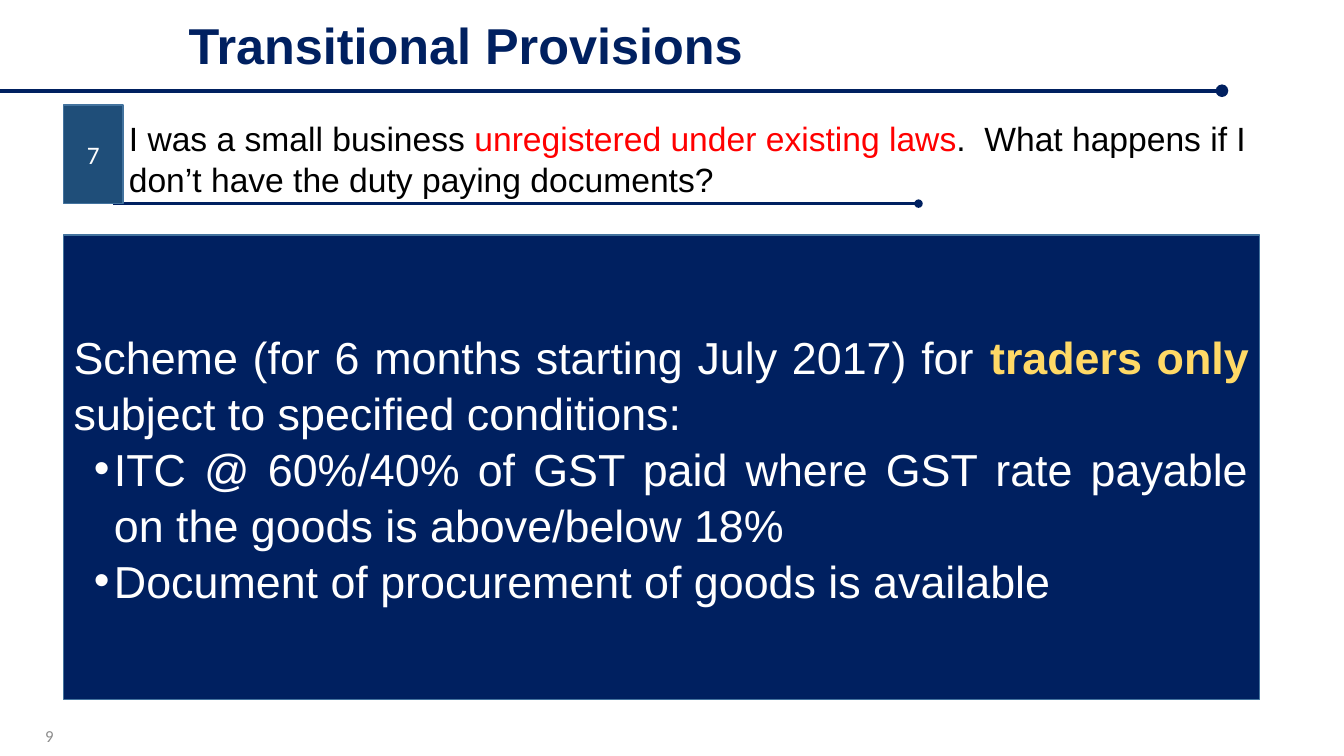
from lxml import etree
from pptx import Presentation
from pptx.dml.color import RGBColor
from pptx.enum.shapes import MSO_CONNECTOR, MSO_SHAPE
from pptx.enum.text import MSO_ANCHOR, MSO_AUTO_SIZE, PP_ALIGN
from pptx.oxml.ns import qn
from pptx.util import Pt

EMU_PER_PX = 9144  # 100 px to the inch
COLORS = {
    "navy": "002060", "badge": "1F4E79", "border": "43739E", "white": "FFFFFF",
    "black": "000000", "red": "FF0000", "gold": "FFD966", "grey": "8C8C8C",
}


def px(length):
    return length * EMU_PER_PX


def rgb(name):
    return RGBColor.from_string(COLORS[name])


def place(shape, box):
    shape.left, shape.top, shape.width, shape.height = map(px, box)


def write(paragraph, parts, size, font="Arial", align=PP_ALIGN.LEFT, spacing=1.0):
    """Fill a paragraph with (text, colour, bold) parts."""
    paragraph.alignment = align
    paragraph.line_spacing = spacing
    paragraph.space_before = Pt(0)
    for text, color, bold in parts:
        run = paragraph.add_run()
        run.text = text
        run.font.size = Pt(size)
        run.font.name = font
        run.font.bold = bold
        run.font.color.rgb = rgb(color)


def set_frame(shape, anchor):
    frame = shape.text_frame
    frame.word_wrap = True
    frame.auto_size = MSO_AUTO_SIZE.NONE
    frame.vertical_anchor = anchor
    return frame


def paint(shape, fill):
    shape.fill.solid()
    shape.fill.fore_color.rgb = rgb(fill)
    shape.line.color.rgb = rgb("border")
    shape.line.width = Pt(1)


def set_bullet(paragraph, margin, indent, bullet=None):
    properties = paragraph._p.get_or_add_pPr()
    properties.set("marL", str(px(margin)))
    properties.set("indent", str(px(indent)))
    if bullet:
        font = etree.SubElement(properties, qn("a:buFont"))
        font.set("typeface", "Arial")
        etree.SubElement(properties, qn("a:buChar")).set("char", bullet)
    else:
        etree.SubElement(properties, qn("a:buNone"))


def add_rule(slide, left, right, y, weight):
    """Draw a horizontal line that ends in a dot on the right."""
    rule = slide.shapes.add_connector(
        MSO_CONNECTOR.STRAIGHT, px(left), px(y), px(right), px(y))
    rule.line.color.rgb = rgb("navy")
    rule.line.width = Pt(weight)
    etree.SubElement(rule.line._get_or_add_ln(), qn("a:tailEnd")).set("type", "oval")
    etree.SubElement(rule._element.spPr, qn("a:effectLst"))


def add_text(slide, box, parts, size, anchor=MSO_ANCHOR.TOP, **style):
    label = slide.shapes.add_textbox(*map(px, box))
    write(set_frame(label, anchor).paragraphs[0], parts, size, **style)


def build_heading(slide, box):
    left, top, width, height = box
    add_rule(slide, 0, left + width + 204, top + height + 10, 3)
    title = slide.shapes.title
    place(title, box)
    frame = set_frame(title, MSO_ANCHOR.TOP)
    write(frame.paragraphs[0], [("Transitional Provisions", "navy", True)], 36)


def build_question(slide, box):
    left, top, width, height = box
    badge_width = 59
    add_rule(slide, left + 49, left + 848, top + height, 2)
    badge = slide.shapes.add_shape(
        MSO_SHAPE.RECTANGLE, *map(px, (left, top, badge_width, height)))
    badge.shadow.inherit = False
    paint(badge, "badge")
    number = set_frame(badge, MSO_ANCHOR.MIDDLE).paragraphs[0]
    write(number, [("7", "white", False)], 18, "Calibri", PP_ALIGN.CENTER)
    question = [
        ("I was a small business ", "black", False),
        ("unregistered under existing laws", "red", False),
        (".  What happens if I don’t have the duty paying documents?", "black", False),
    ]
    add_text(slide, (left + 55, top + 6, width - 55, height - 7), question, 24,
             spacing=1.04)


def build_answer(slide, box):
    answer = slide.placeholders[1]
    place(answer, box)
    paint(answer, "navy")
    frame = set_frame(answer, MSO_ANCHOR.MIDDLE)
    scheme = [
        ("Scheme (for 6 months starting July 2017) for ", "white", False),
        ("traders only ", "gold", True),
        ("subject to specified conditions:", "white", False),
    ]
    conditions = [
        "ITC @ 60%/40% of GST paid where GST rate payable on the goods is above/below 18%",
        "Document of procurement of goods is available",
    ]
    style = {"size": 32, "align": PP_ALIGN.JUSTIFY, "spacing": 1.04}
    write(frame.paragraphs[0], scheme, **style)
    set_bullet(frame.paragraphs[0], 0, 0)
    for condition in conditions:
        paragraph = frame.add_paragraph()
        write(paragraph, [(condition, "white", False)], **style)
        set_bullet(paragraph, 40, -20, "•")


def build_page_number(slide, box):
    add_text(slide, box, [("9", "grey", False)], 12, MSO_ANCHOR.MIDDLE,
             font="Calibri", align=PP_ALIGN.RIGHT)


def main():
    presentation = Presentation()
    presentation.slide_width, presentation.slide_height = px(1333), px(750)
    slide = presentation.slides.add_slide(presentation.slide_layouts[1])
    build_heading(slide, (177, 9, 831, 71))
    build_question(slide, (63, 104, 1190, 98))
    build_answer(slide, (63, 233, 1186, 461))
    build_page_number(slide, (0, 710, 63, 40))
    presentation.save("out.pptx")


if __name__ == "__main__":
    main()
